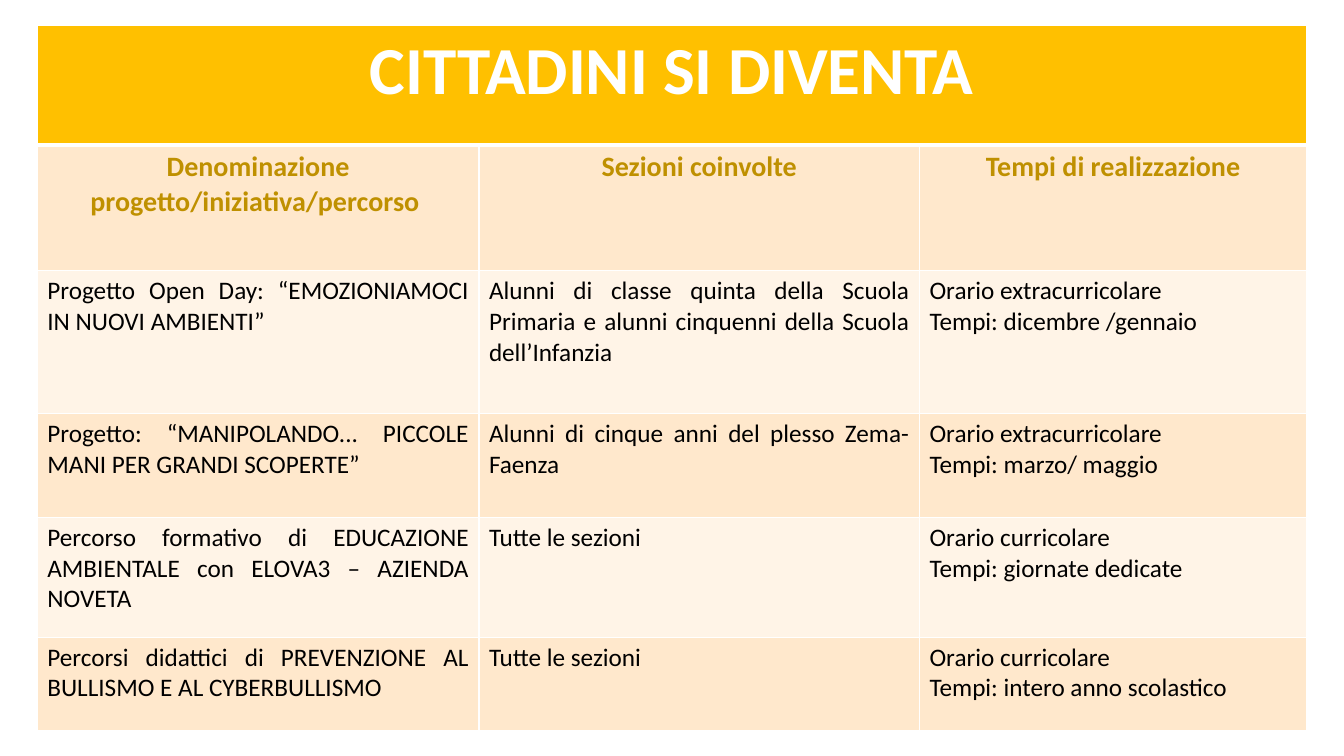
import pptx
import pptx.util
import pptx.dml.color
import pptx.enum.text
import pptx.oxml
import pptx.oxml.ns

RGBColor = pptx.dml.color.RGBColor
ALIGN = pptx.enum.text.PP_ALIGN
WHITE = RGBColor(0xFF, 0xFF, 0xFF)
BLACK = RGBColor(0, 0, 0)
AMBER = RGBColor(0xFF, 0xC0, 0x00)
OCHRE = RGBColor(0xBF, 0x90, 0x00)
PEACH = RGBColor(0xFF, 0xE8, 0xCC)
CREAM = RGBColor(0xFF, 0xF4, 0xE7)

SLIDE_SIZE = (13.33, 7.5)
TABLE_BOX = (0.37, 0.25, 12.59, 7)
COLUMN_SHARES = (4.38, 4.37, 3.84)
ROW_SHARES = (1.19, 1.25, 1.42, 1.03, 1.19, 0.93)

TITLE_FORMAT = {"name": "Calibri", "size": pptx.util.Pt(48), "bold": True}
HEADING_FORMAT = {"name": "Calibri", "size": pptx.util.Pt(20), "bold": True}
BODY_FORMAT = {"name": "Calibri", "size": pptx.util.Pt(18), "bold": False}

TITLE = "CITTADINI SI DIVENTA"
HEADINGS = (
    "Denominazione progetto/iniziativa/percorso ",
    "Sezioni coinvolte",
    "Tempi di realizzazione",
)
PROJECTS = (
    (
        "Progetto Open Day: “EMOZIONIAMOCI IN NUOVI AMBIENTI”",
        "Alunni di classe quinta della Scuola Primaria e alunni cinquenni "
        "della Scuola dell’Infanzia",
        "Orario extracurricolare\nTempi: dicembre /gennaio",
    ),
    (
        "Progetto: “MANIPOLANDO... PICCOLE MANI PER GRANDI SCOPERTE”",
        "Alunni di cinque anni del plesso Zema-Faenza",
        "Orario extracurricolare\nTempi: marzo/ maggio",
    ),
    (
        "Percorso formativo di EDUCAZIONE AMBIENTALE con ELOVA3 – AZIENDA NOVETA",
        "Tutte le sezioni",
        "Orario curricolare\nTempi: giornate dedicate",
    ),
    (
        "Percorsi didattici di PREVENZIONE AL BULLISMO E AL CYBERBULLISMO",
        "Tutte le sezioni",
        "Orario curricolare\nTempi: intero anno scolastico",
    ),
)


def set_borders(cell, widths):
    """Draw white borders of the given point widths: left, right, top, bottom."""
    properties = cell._tc.get_or_add_tcPr()
    for index, (side, width) in enumerate(zip("LRTB", widths)):
        border = pptx.oxml.parse_xml(
            f'<a:ln{side} {pptx.oxml.ns.nsdecls("a")} w="{pptx.util.Pt(width)}">'
            f'<a:solidFill><a:srgbClr val="{WHITE}"/></a:solidFill></a:ln{side}>'
        )
        properties.insert(index, border)


def fill_cell(cell, text, fill, color, alignment, text_format, borders=(1, 1, 1, 1)):
    """Write and format the text, fill and borders of one cell."""
    cell.text = text
    cell.fill.solid()
    cell.fill.fore_color.rgb = fill
    set_borders(cell, borders)
    for para in cell.text_frame.paragraphs:
        para.alignment = alignment
        for span in para.runs:
            span.font.color.rgb = color
            for name, value in text_format.items():
                setattr(span.font, name, value)


def add_project_table(page, box):
    """Place the table of projects in the box, sized by column and row shares."""
    left, top, width, height = box
    frame = page.shapes.add_table(
        len(ROW_SHARES), len(COLUMN_SHARES), *map(pptx.util.Inches, box)
    )
    table = frame.table
    for column, share in zip(table.columns, COLUMN_SHARES):
        column.width = pptx.util.Inches(width * share / sum(COLUMN_SHARES))
    for row, share in zip(table.rows, ROW_SHARES):
        row.height = pptx.util.Inches(height * share / sum(ROW_SHARES))

    table.cell(0, 0).merge(table.cell(0, len(COLUMN_SHARES) - 1))
    for index, cell in enumerate(table.rows[0].cells):
        text = TITLE if index == 0 else ""
        fill_cell(cell, text, AMBER, WHITE, ALIGN.CENTER, TITLE_FORMAT, (1, 1, 1, 3))
    for cell, text in zip(table.rows[1].cells, HEADINGS):
        fill_cell(cell, text, PEACH, OCHRE, ALIGN.CENTER, HEADING_FORMAT, (1, 1, 3, 1))
    for number, project in enumerate(PROJECTS):
        fill = PEACH if number % 2 else CREAM
        for cell, text in zip(table.rows[number + 2].cells, project):
            fill_cell(cell, text, fill, BLACK, ALIGN.JUSTIFY, BODY_FORMAT)


def main():
    """Build the deck and save it."""
    deck = pptx.Presentation()
    deck.slide_width, deck.slide_height = map(pptx.util.Inches, SLIDE_SIZE)
    page = deck.slides.add_slide(deck.slide_layouts.get_by_name("Blank"))
    add_project_table(page, TABLE_BOX)
    deck.save("out.pptx")


if __name__ == "__main__":
    main()
